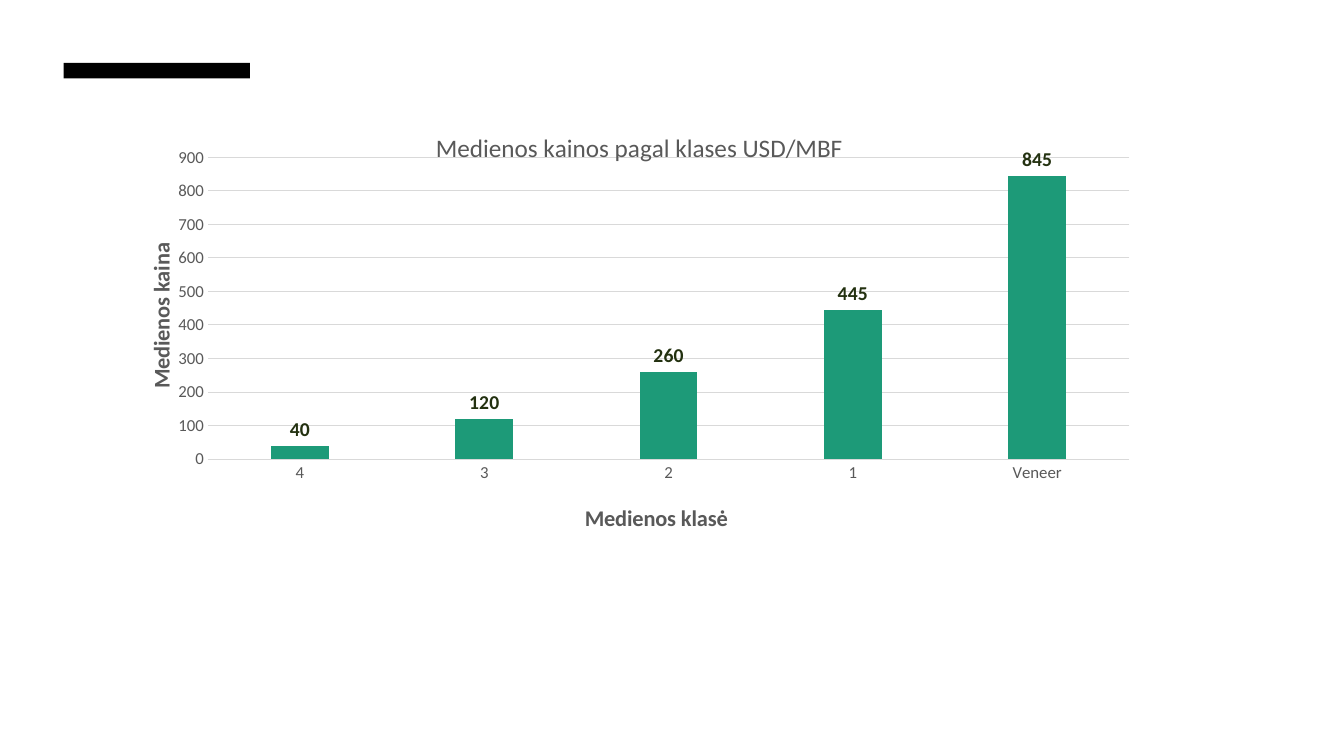
from dataclasses import dataclass

from lxml import etree
from pptx import Presentation
from pptx.chart.data import CategoryChartData
from pptx.dml.color import RGBColor
from pptx.enum.chart import XL_CHART_TYPE, XL_LABEL_POSITION, XL_TICK_MARK
from pptx.enum.shapes import MSO_SHAPE
from pptx.oxml.ns import qn
from pptx.util import Pt

COLUMNS = XL_CHART_TYPE.COLUMN_CLUSTERED
OUTSIDE_END = XL_LABEL_POSITION.OUTSIDE_END
NO_TICKS = XL_TICK_MARK.NONE
RECTANGLE = MSO_SHAPE.RECTANGLE
BLANK_LAYOUT = 6


@dataclass(frozen=True)
class Theme:
    font: str = "Calibri"
    accent: str = "000000"
    text: str = "595959"
    grid: str = "D9D9D9"
    column: str = "1D9A78"
    value: str = "233110"
    heading_size: int = 18
    axis_title_size: int = 16
    value_size: int = 14
    tick_size: int = 12
    base_size: int = 10


THEME = Theme()

PRICES = {"4": 40, "3": 120, "2": 260, "1": 445, "Veneer": 845}


def style_font(font, size, color, bold=False):
    font.name = THEME.font
    font.size = Pt(size)
    font.bold = bold
    font.color.rgb = RGBColor.from_string(color)


def style_line(line, color):
    line.color.rgb = RGBColor.from_string(color)
    line.width = Pt(0.75)


def place(element, index, **settings):
    for previous in element.findall(qn("c:layout")):
        element.remove(previous)
    layout = etree.Element(qn("c:layout"))
    manual = etree.SubElement(layout, qn("c:manualLayout"))
    for tag, value in settings.items():
        etree.SubElement(manual, qn(f"c:{tag}")).set("val", str(value))
    element.insert(index, layout)


def write_title(title, text, size, x, y, bold=False, rotation=0):
    paragraph = title.text_frame.paragraphs[0]
    run = paragraph.add_run()
    run.text = text
    style_font(run.font, size, THEME.text, bold)
    body = title._element.xpath(".//a:bodyPr")[0]
    body.set("rot", str(rotation * 60000))
    body.set("vert", "horz")
    place(title._element, 1, xMode="edge", yMode="edge", x=x, y=y)


def style_axis(axis, title, x, y, rotation=0):
    axis.major_tick_mark = NO_TICKS
    axis.minor_tick_mark = NO_TICKS
    style_font(axis.tick_labels.font, THEME.tick_size, THEME.text)
    write_title(axis.axis_title, title, THEME.axis_title_size, x, y,
                bold=True, rotation=rotation)


def add_accent_bar(slide):
    bar = slide.shapes.add_shape(RECTANGLE, Pt(45.5), Pt(45), Pt(133), Pt(11))
    bar.shadow.inherit = False
    bar.fill.solid()
    bar.fill.fore_color.rgb = RGBColor.from_string(THEME.accent)
    bar.line.fill.background()


def style_columns(plot):
    plot.gap_width = 219
    plot.overlap = -27
    plot.vary_by_categories = False
    columns = plot.series[0]
    columns.invert_if_negative = False
    columns.format.fill.solid()
    columns.format.fill.fore_color.rgb = RGBColor.from_string(THEME.column)
    labels = columns.data_labels
    labels.show_value = True
    labels.position = OUTSIDE_END
    style_font(labels.font, THEME.value_size, THEME.value, bold=True)


def add_price_chart(slide):
    prices = CategoryChartData()
    prices.categories = list(PRICES)
    prices.add_series("Series 1", list(PRICES.values()))
    chart = slide.shapes.add_chart(
        COLUMNS, Pt(94.3), Pt(76.3), Pt(712.8), Pt(337), prices).chart
    style_font(chart.font, THEME.base_size, THEME.accent)
    chart.has_legend = False
    write_title(chart.chart_title, "Medienos kainos pagal klases USD/MBF",
                THEME.heading_size, x=0.3, y=0.04)
    place(chart._chartSpace.chart.plotArea, 0, layoutTarget="inner",
          xMode="edge", yMode="edge", x=0.076, y=0.107, w=0.924, h=0.64)

    style_axis(chart.category_axis, "Medienos klasė", x=0.45, y=0.83)
    style_line(chart.category_axis.format.line, THEME.grid)

    price_axis = chart.value_axis
    style_axis(price_axis, "Medienos kaina", x=0.01, y=0.28, rotation=-90)
    price_axis.minimum_scale = 0
    price_axis.maximum_scale = 900
    price_axis.major_unit = 100
    price_axis.format.line.fill.background()
    style_line(price_axis.major_gridlines.format.line, THEME.grid)

    style_columns(chart.plots[0])


def main():
    presentation = Presentation()
    presentation.slide_width = Pt(960)
    presentation.slide_height = Pt(540)
    slide = presentation.slides.add_slide(
        presentation.slide_layouts[BLANK_LAYOUT])
    add_accent_bar(slide)
    add_price_chart(slide)
    presentation.save("out.pptx")


if __name__ == "__main__":
    main()
